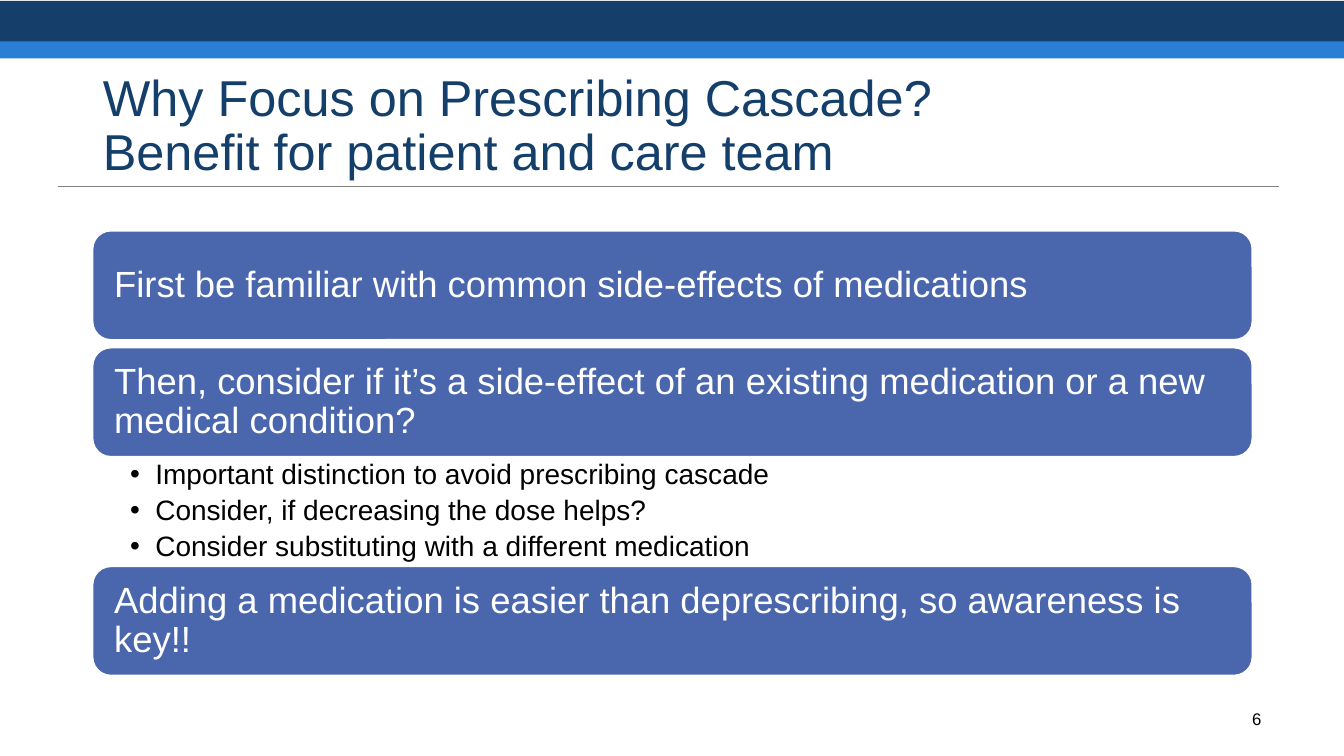
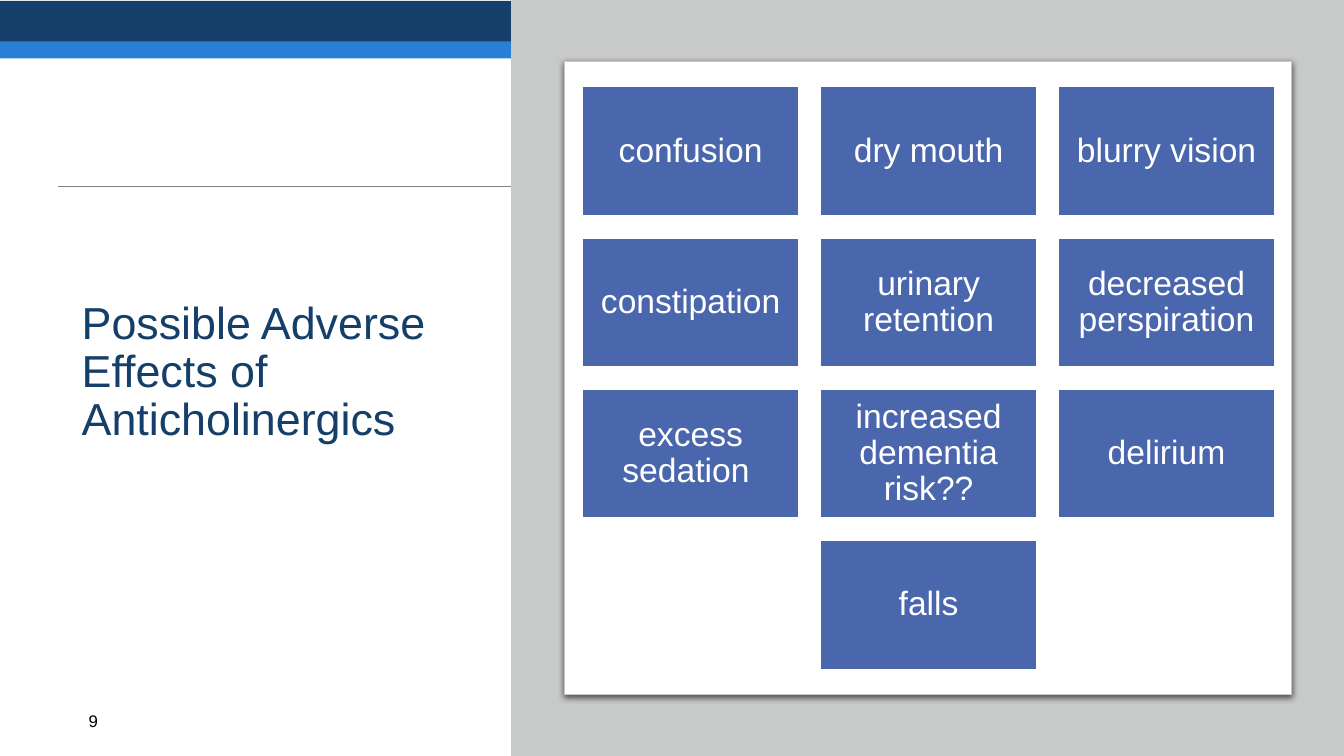
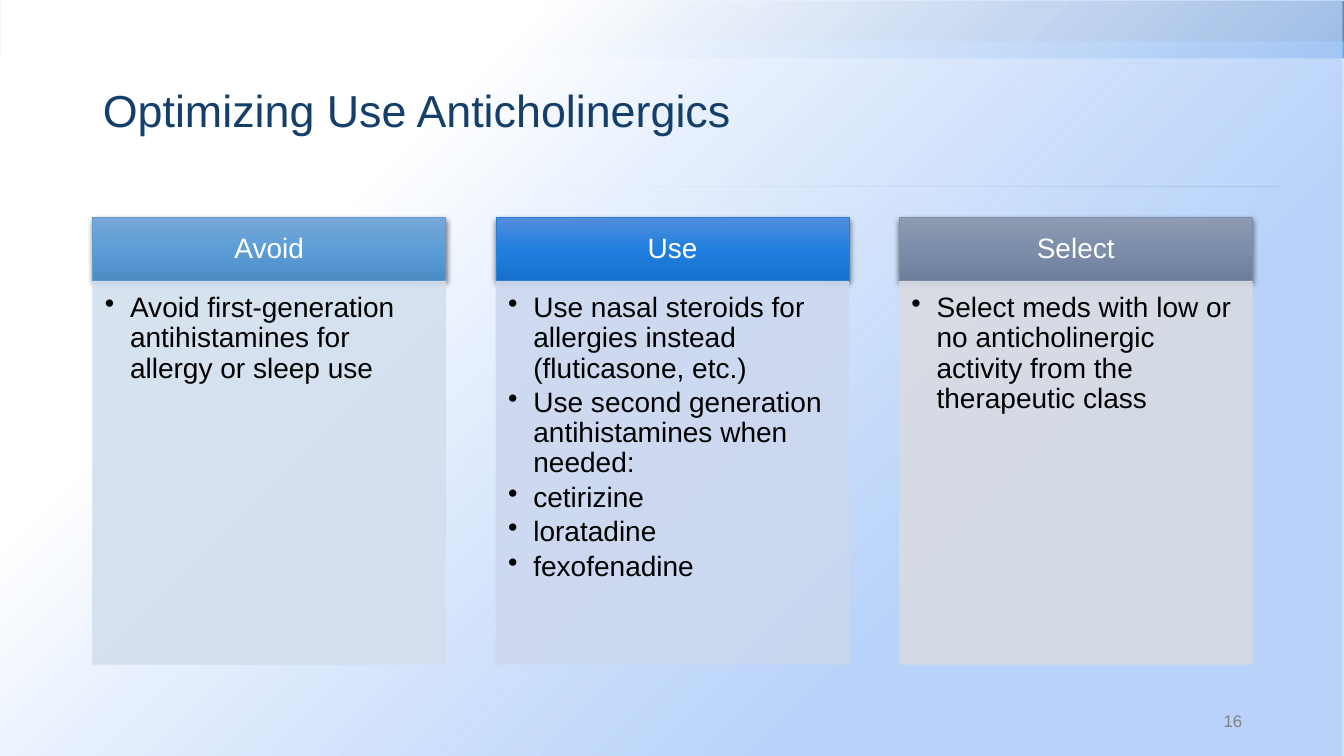
"""Builds three slides on prescribing cascades and anticholinergics."""
import pptx
import pptx.dml.color
import pptx.enum.shapes
import pptx.enum.text
import pptx.oxml
import pptx.oxml.ns
import pptx.util
from lxml import etree

FONT = "Arial"
WIDTH, HEIGHT = 13.33, 7.5
COLORS = {
    "navy": "143F6A", "blue": "297FD5", "rule": "808080", "box": "4A66AC",
    "panel": "C8CACA", "sky": "ACCBF9", "white": "FFFFFF", "black": "000000",
}
MARGIN, CONTENT_WIDTH = 0.92, 11.5
BANDS = [(0.01, 0.42, "navy"), (0.41, 0.17, "blue")]
RULE_Y, RULE_LEFT, RULE_RIGHT = 1.85, 0.58, 12.69

CASCADE_TITLE = ["Why Focus on Prescribing Cascade?", "Benefit for patient and care team"]
CASCADE_STEPS = [
    (2.29, "First be familiar with common side-effects of medications"),
    (3.45, "Then, consider if it’s a side-effect of an existing medication or a new medical condition?"),
    (5.62, "Adding a medication is easier than deprescribing, so awareness is key!!"),
]
CASCADE_CHECKS = [
    "Important distinction to avoid prescribing cascade",
    "Consider, if decreasing the dose helps?",
    "Consider substituting with a different medication",
]
EFFECTS_TITLE = ["Possible Adverse Effects of Anticholinergics"]
EFFECT_ROWS = [
    ["confusion", "dry mouth", "blurry vision"],
    ["constipation", "urinary retention", "decreased perspiration"],
    ["excess sedation ", "increased dementia risk??", "delirium"],
    ["falls"],
]
OPTIMIZE_TITLE = ["Optimizing Use Anticholinergics"]
ADVICE = [
    {"head": "Avoid", "shades": ["77A8D7", "5C9DD7", "4C8CC5"], "edge": "629DD1", "tint": "D3DFEE",
     "points": ["Avoid first-generation antihistamines for allergy or sleep use"]},
    {"head": "Use", "shades": ["538DDC", "207FDE", "1571CD"], "edge": "297FD5", "tint": "CDD8EF",
     "points": ["Use nasal steroids for allergies instead (fluticasone, etc.)",
                "Use second generation antihistamines when needed:",
                "cetirizine", "loratadine", "fexofenadine"]},
    {"head": "Select", "shades": ["8E9BB2", "7D8EAB", "6D7E9A"], "edge": "7F8FA9", "tint": "D8DBE2",
     "points": ["Select meds with low or no anticholinergic activity from the therapeutic class"]},
]

SHAPE = pptx.enum.shapes.MSO_SHAPE
ALIGN = pptx.enum.text.PP_ALIGN
ANCHOR = pptx.enum.text.MSO_ANCHOR
LINEAR_DOWN = '<a:lin ang="5400000" scaled="0"/>'
FROM_CORNER = '<a:path path="circle"><a:fillToRect l="100000" t="100000"/></a:path>'
qn = pptx.oxml.ns.qn


def rgb(color):
    """Turns a colour name or hex string into an RGB value."""
    return pptx.dml.color.RGBColor.from_string(COLORS.get(color, color))


def inches(*lengths):
    """Converts lengths in inches to slide units."""
    return [pptx.util.Inches(length) for length in lengths]


def write(target, lines, size, color="white", align=ALIGN.LEFT, anchor=ANCHOR.MIDDLE,
          insets=(0.1, 0.05, 0.1, 0.05), spacing=0.9, after=0, bullet=False):
    """Fills a shape with formatted paragraphs."""
    frame = target.text_frame
    frame.word_wrap = True
    frame.auto_size = pptx.enum.text.MSO_AUTO_SIZE.NONE
    frame.vertical_anchor = anchor
    frame.margin_left, frame.margin_top, frame.margin_right, frame.margin_bottom = inches(*insets)
    for number, line in enumerate(lines):
        paragraph = frame.add_paragraph() if number else frame.paragraphs[0]
        paragraph.alignment = align
        paragraph.line_spacing = spacing
        paragraph.space_before = pptx.util.Pt(0)
        paragraph.space_after = pptx.util.Pt(after)
        if bullet:
            properties = paragraph._p.get_or_add_pPr()
            indent = pptx.util.Inches(0.25)
            properties.set("marL", str(indent))
            properties.set("indent", str(-indent))
            etree.SubElement(properties, qn("a:buChar")).set("char", "•")
        run = paragraph.add_run()
        run.text = line
        run.font.name, run.font.size = FONT, pptx.util.Pt(size)
        run.font.color.rgb = rgb(color)


def place(target, *box):
    """Moves a placeholder to a box in inches."""
    target.left, target.top, target.width, target.height = inches(*box)
    return target


def add_block(slide, box, fill, edge=None, weight=1, kind=SHAPE.RECTANGLE, alpha=None, shadow=False):
    """Adds a preset shape with a flat fill."""
    block = slide.shapes.add_shape(kind, *inches(*box))
    block.shadow.inherit = False
    block.fill.solid()
    block.fill.fore_color.rgb = rgb(fill)
    if edge:
        block.line.color.rgb = rgb(edge)
        block.line.width = pptx.util.Pt(weight)
    else:
        block.line.fill.background()
    if alpha:
        for tone in block.element.spPr.iter(qn("a:srgbClr")):
            etree.SubElement(tone, qn("a:alpha")).set("val", str(alpha * 1000))
    if shadow:
        block.element.spPr.find(qn("a:effectLst")).append(pptx.oxml.parse_xml(
            f'<a:outerShdw {pptx.oxml.ns.nsdecls("a")} blurRad="57150" dist="19050" dir="5400000" '
            'algn="ctr" rotWithShape="0"><a:srgbClr val="000000"><a:alpha val="63000"/>'
            '</a:srgbClr></a:outerShdw>'))
    return block


def shade(block, stops, direction):
    """Replaces a flat fill by a gradient of (position, colour, alpha) stops."""
    marks = "".join(
        f'<a:gs pos="{position * 1000}"><a:srgbClr val="{rgb(color)}">'
        f'<a:alpha val="{alpha * 1000}"/></a:srgbClr></a:gs>' for position, color, alpha in stops)
    gradient = pptx.oxml.parse_xml(
        f'<a:gradFill {pptx.oxml.ns.nsdecls("a")} rotWithShape="1"><a:gsLst>{marks}</a:gsLst>{direction}</a:gradFill>')
    properties = block.element.spPr
    properties.replace(properties.find(qn("a:solidFill")), gradient)


def add_page_number(slide, number, box, color="black"):
    """Adds a right-aligned page number."""
    write(slide.shapes.add_textbox(*inches(*box)), [number], 12, color, ALIGN.RIGHT, spacing=1)


def start_slide(deck, layout, title, size, box):
    """Adds a slide with its title in place."""
    slide = deck.slides.add_slide(deck.slide_layouts.get_by_name(layout))
    write(place(slide.shapes.title, *box), title, size, "navy")
    return slide


def decorate_master(deck, slide):
    """Draws the bands and the title rule and moves them to the master."""
    parts = [add_block(slide, (0, top, WIDTH, height), color) for top, height, color in BANDS]
    rule = slide.shapes.add_connector(pptx.enum.shapes.MSO_CONNECTOR.STRAIGHT,
                                      *inches(RULE_LEFT, RULE_Y, RULE_RIGHT, RULE_Y))
    rule.line.color.rgb = rgb("rule")
    rule.line.width = pptx.util.Pt(0.5)
    etree.SubElement(rule.element.spPr, qn("a:effectLst"))
    for order, part in enumerate(parts + [rule]):
        part.element.xpath(".//p:cNvPr")[0].set("id", str(20 + order))
        deck.slide_master.shapes.element.insert(2 + order, part.element)


def build_cascade(deck):
    """Builds the slide of steps with a checklist."""
    slide = start_slide(deck, "Title and Content", CASCADE_TITLE, 36, (MARGIN, 0.67, CONTENT_WIDTH, 1.18))
    decorate_master(deck, slide)
    for top, step in CASCADE_STEPS:
        bar = add_block(slide, (MARGIN, top, CONTENT_WIDTH, 1.08), "box", "white",
                        kind=SHAPE.ROUNDED_RECTANGLE)
        write(bar, [step], 26, insets=(0.16,) * 4)
    checks = place(slide.placeholders[1], MARGIN, 4.53, CONTENT_WIDTH, 1.09)
    write(checks, CASCADE_CHECKS, 20, "black", anchor=ANCHOR.TOP,
          insets=(0.37, 0.04, 0.2, 0.04), after=4, bullet=True)
    add_page_number(slide, "6", (9.61, 6.93, 3, 0.4))


def build_effects(deck):
    """Builds the slide with the grid of adverse effects."""
    slide = start_slide(deck, "Title Only", EFFECTS_TITLE, 32, (0.71, 0.69, 4.01, 6.02))
    add_block(slide, (5.07, 0, WIDTH - 5.07, HEIGHT), "panel")
    add_block(slide, (5.6, 0.61, 7.21, 6.28), "white", "panel", 0.75, shadow=True)
    tile_width, tile_height, gap = 2.14, 1.28, 0.22
    columns = len(EFFECT_ROWS[0])
    for row, effects in enumerate(EFFECT_ROWS):
        indent = (columns - len(effects)) / 2
        for column, effect in enumerate(effects):
            left = 5.78 + (indent + column) * (tile_width + gap)
            top = 0.86 + row * (tile_height + gap)
            tile = add_block(slide, (left, top, tile_width, tile_height), "box", "white")
            write(tile, [effect], 24, align=ALIGN.CENTER, insets=(0.1,) * 4)
    add_page_number(slide, "9", (0.32, 6.95, 0.75, 0.4))


def build_advice(deck):
    """Builds the slide with three columns of advice."""
    slide = start_slide(deck, "Title Only", OPTIMIZE_TITLE, 32, (MARGIN, 0.4, CONTENT_WIDTH, 1.45))
    veil = add_block(slide, (0, 0, WIDTH, HEIGHT), "white")
    shade(veil, [(28, "sky", 84), (74, "white", 100)], FROM_CORNER)
    slide.shapes.element.insert(2, veil.element)
    column_width, head_top, head_height, list_height = 3.5, 2.16, 0.63, 3.8
    step = (CONTENT_WIDTH - column_width) / (len(ADVICE) - 1)
    for column, advice in enumerate(ADVICE):
        left = MARGIN + column * step
        head = add_block(slide, (left, head_top, column_width, head_height), advice["edge"],
                         advice["edge"], 0.5, shadow=True)
        shade(head, [(50 * i, color, 100) for i, color in enumerate(advice["shades"])], LINEAR_DOWN)
        write(head, [advice["head"]], 20, align=ALIGN.CENTER, insets=(0.16, 0.09, 0.16, 0.09))
        points = add_block(slide, (left, head_top + head_height, column_width, list_height),
                           advice["tint"], advice["tint"], 0.5, alpha=90)
        write(points, advice["points"], 20, "black", anchor=ANCHOR.TOP,
              insets=(0.12, 0.12, 0.16, 0.17), after=3, bullet=True)
    add_page_number(slide, "16", (9.42, 6.95, 3, 0.4), "rule")


def main():
    """Builds and saves the presentation."""
    deck = pptx.Presentation()
    deck.slide_width, deck.slide_height = inches(WIDTH, HEIGHT)
    build_cascade(deck)
    build_effects(deck)
    build_advice(deck)
    deck.save("out.pptx")


if __name__ == "__main__":
    main()
